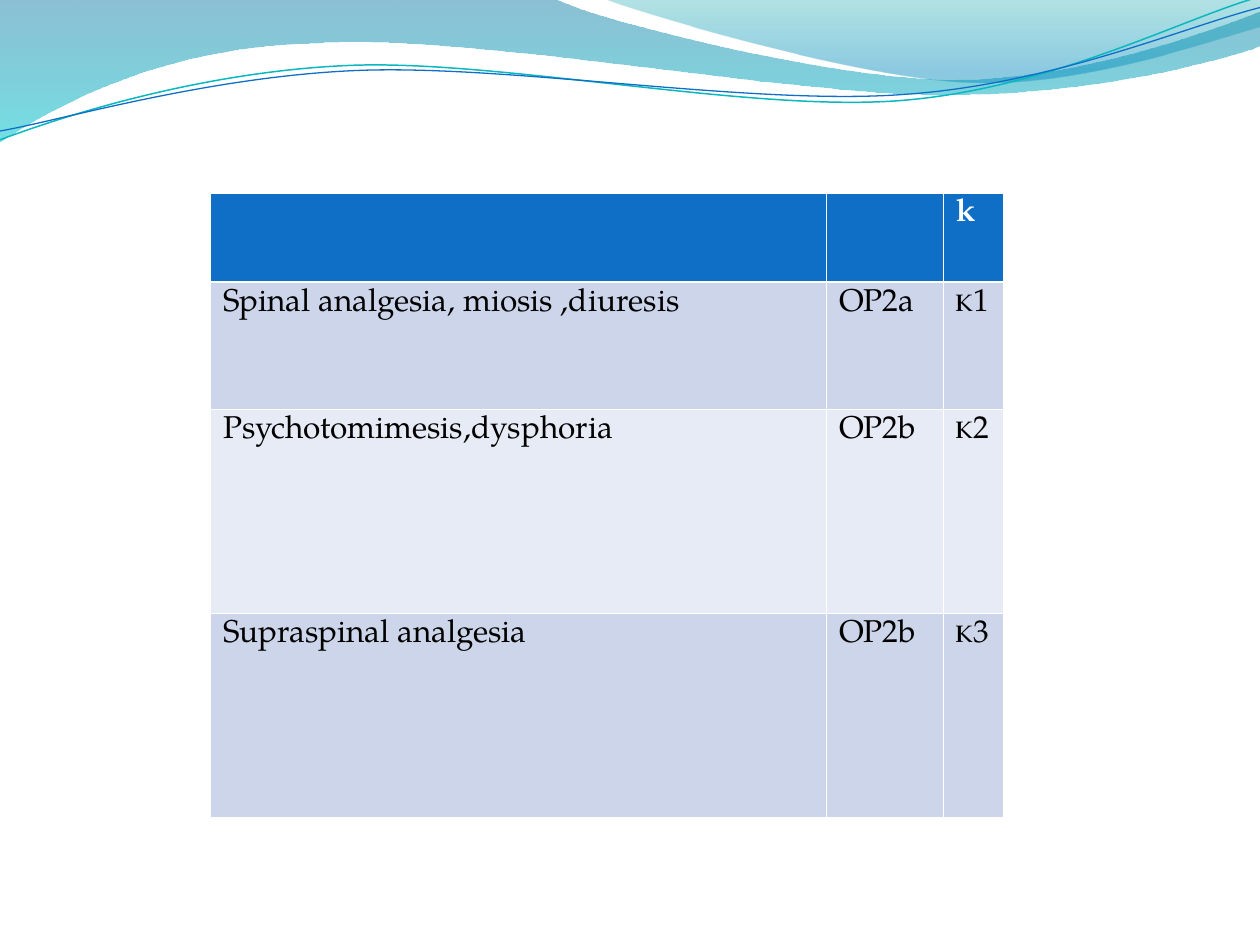
from lxml.etree import SubElement
from pptx import Presentation
from pptx.dml.color import RGBColor
from pptx.oxml.ns import qn
from pptx.util import Inches, Pt


def color(hex_value):
    return RGBColor.from_string(hex_value)


def add_wave(start, segments, closed):
    """Draw lines (one point) and cubic curves (three points), in inches."""
    points = [(Inches(x), Inches(y)) for x, y in [start, *sum(segments, [])]]
    builder = slide.shapes.build_freeform(*points[0])
    builder.add_line_segments(points[1:], close=closed)
    wave = builder.convert_to_shape()
    wave.shadow.inherit = False

    # Join each run of three line points into one Bezier curve
    line_points = wave._element.spPr.iter(qn("a:lnTo"))
    line_points = iter(list(line_points))
    for segment in segments:
        pieces = [next(line_points) for _ in segment]
        if len(pieces) == 3:
            curve = pieces[0]
            curve.tag = qn("a:cubicBezTo")
            for piece in pieces[1:]:
                curve.append(piece[0])
                piece.getparent().remove(piece)
    return wave


prs = Presentation()
prs.slide_width, prs.slide_height = Inches(10), Inches(7.5)
slide = prs.slides.add_slide(prs.slide_layouts[6])

# Filled waves: start, segments, gradient stops (position, colour, opacity %)
filled_waves = [
    ((0, 0),
     [[(4.4, -0.01)],
      [(4.76, 0.17), (6.64, 0.63), (7.58, 0.63)],
      [(8.53, 0.63), (9.58, 0.26), (10, 0.09)],
      [(10.01, 0.36)],
      [(9.83, 0.44), (8.7, 0.76), (7.46, 0.75)],
      [(6.22, 0.75), (3.82, 0.28), (2.57, 0.34)],
      [(1.29, 0.36), (0.46, 0.83), (-0.01, 1.13)]],
     [(0, "0074A1", 45), (1, "00C6CF", 55)]),
    ((4.79, -0.01),
     [[(5.09, 0.11), (6.82, 0.62), (7.69, 0.65)],
      [(8.56, 0.69), (9.61, 0.32), (10, 0.21)],
      [(10, 0)]],
     [(0, "00A1A9", 30), (0.8, "008BBF", 45)]),
]
for start, segments, gradient in filled_waves:
    wave = add_wave(start, segments, closed=True)
    wave.line.fill.background()
    wave.fill.gradient()
    wave.fill.gradient_angle = 270
    for stop, (position, hex_value, _) in zip(wave.fill.gradient_stops, gradient):
        stop.position = position
        stop.color.rgb = color(hex_value)
    stop_colors = wave._element.spPr.iter(qn("a:srgbClr"))
    for stop_color, (_, _, opacity) in zip(stop_colors, gradient):
        SubElement(stop_color, qn("a:alpha"), val=str(opacity * 1000))

# Thin waves: start, curves, colour, width in points
thin_waves = [
    ((0, 1.11),
     [[(0.48, 0.93), (1.58, 0.57), (2.77, 0.52)],
      [(3.95, 0.47), (5.93, 0.89), (7.13, 0.8)],
      [(8.33, 0.71), (9.38, 0.15), (9.98, -0.02)]], "0AB8BF", 0.85),
    ((0, 1.04),
     [[(0.47, 0.96), (1.64, 0.61), (2.83, 0.56)],
      [(4.03, 0.51), (5.97, 0.84), (7.17, 0.75)],
      [(8.36, 0.67), (9.41, 0.21), (10, 0.06)]], "0F6FC6", 0.75),
]
for start, curves, hex_value, width in thin_waves:
    wave = add_wave(start, curves, closed=False)
    wave.fill.background()
    wave.line.color.rgb = color(hex_value)
    wave.line.width = Pt(width)

# Receptor table; its default style draws the white borders
receptors = [
    ("", "", "k"),
    ("Spinal analgesia, miosis ,diuresis", "OP2a", "ĸ1"),
    ("Psychotomimesis,dysphoria", "OP2b", "ĸ2"),
    ("Supraspinal analgesia", "OP2b", "ĸ3"),
]
column_widths = [4.89, 0.93, 0.48]
row_heights = [0.71, 1.01, 1.62, 1.62]
row_fills = ["0F6FC6", "CCD5EA", "E7EBF5", "CCD5EA"]

table = slide.shapes.add_table(
    len(receptors), len(column_widths), Inches(1.67), Inches(1.53),
    Inches(sum(column_widths)), Inches(sum(row_heights))).table
for column, width in zip(table.columns, column_widths):
    column.width = Inches(width)
for row, height in zip(table.rows, row_heights):
    row.height = Inches(height)

for r, texts in enumerate(receptors):
    header = r == 0
    font_format = {"name": "TeX Gyre Pagella", "size": Pt(18), "bold": header}
    for c, text in enumerate(texts):
        cell = table.cell(r, c)
        cell.fill.solid()
        cell.fill.fore_color.rgb = color(row_fills[r])
        cell.text = text
        for run in cell.text_frame.paragraphs[0].runs:
            for name, value in font_format.items():
                setattr(run.font, name, value)
            run.font.color.rgb = color("FFFFFF" if header else "000000")

prs.save("out.pptx")
